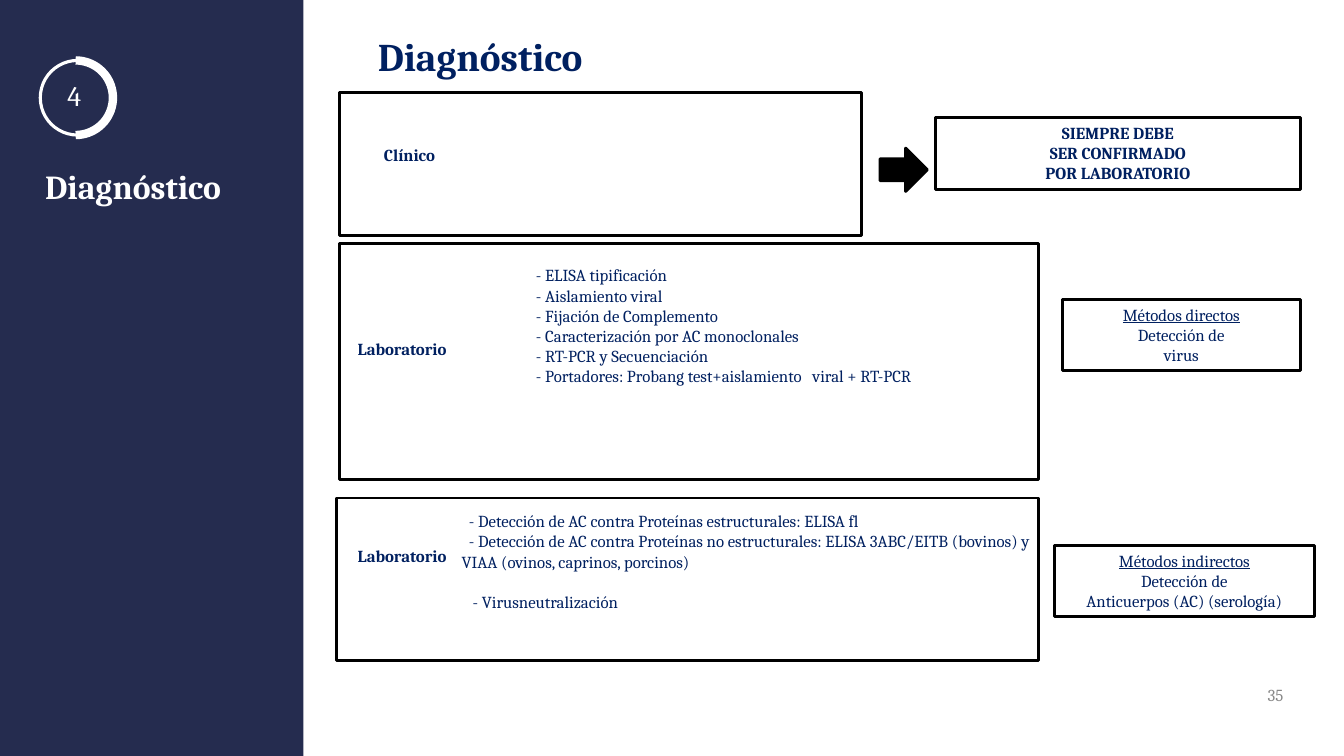
from collections import namedtuple
from math import cos, pi, sin

from lxml import etree
from pptx import Presentation
from pptx.dml.color import RGBColor
from pptx.enum.shapes import MSO_SHAPE as Preset
from pptx.enum.text import MSO_ANCHOR as Anchor, PP_ALIGN as Align
from pptx.oxml.ns import qn
from pptx.util import Pt

COLORS = {
    "navy": "252C4F",
    "text": "002060",
    "white": "FFFFFF",
    "black": "000000",
    "gray": "888888",
}
FONT = "Cambria"
LINE_HEIGHT = 14.4
NOTE_HEIGHT = 51.1

Box = namedtuple("Box", "left top width height")


def rgb(name):
    return RGBColor.from_string(COLORS[name])


def inside(box, left, top, width, height):
    """Return a box whose left and top are offsets from another box."""
    return Box(box.left + left, box.top + top, width, height)


def style_shape(shape, fill=None, line=None, weight=2):
    shape.shadow.inherit = False
    if fill:
        shape.fill.solid()
        shape.fill.fore_color.rgb = rgb(fill)
    else:
        shape.fill.background()
    if line:
        shape.line.color.rgb = rgb(line)
        shape.line.width = Pt(weight)
    else:
        shape.line.fill.background()


def add_preset(slide, preset, box, fill=None, line=None, weight=2):
    shape = slide.shapes.add_shape(preset, *map(Pt, box))
    style_shape(shape, fill, line, weight)
    return shape


def write(shape, text, size=12, color="text", bold=False, align=Align.LEFT,
          anchor=Anchor.TOP):
    frame = shape.text_frame
    frame.word_wrap = True
    frame.vertical_anchor = anchor
    frame.text = text
    for paragraph in frame.paragraphs:
        paragraph.alignment = align
        for run in paragraph.runs:
            run.font.name = FONT
            run.font.size = Pt(size)
            run.font.bold = bold
            run.font.color.rgb = rgb(color)
    return frame


def add_text(slide, box, text, **style):
    return write(slide.shapes.add_textbox(*map(Pt, box)), text, **style)


def add_note(slide, box, text, **style):
    note = add_preset(slide, Preset.RECTANGLE, box, line="black", weight=2.25)
    return write(note, text, align=Align.CENTER, **style)


def indent_first_line(paragraph, indent):
    properties = paragraph._p.get_or_add_pPr()
    properties.set("marL", "0")
    properties.set("indent", str(Pt(indent)))


def add_tab_stop(paragraph, position):
    tabs = etree.SubElement(paragraph._p.get_or_add_pPr(), qn("a:tabLst"))
    etree.SubElement(tabs, qn("a:tab"), pos=str(Pt(position)), algn="l")


def add_half_ring(slide, center_x, center_y, radius, steps=36):
    """Draw the thick right half of the ring, from top to bottom."""
    angles = [pi * step / steps - pi / 2 for step in range(steps + 1)]
    points = [(Pt(center_x + radius * cos(angle)),
               Pt(center_y + radius * sin(angle))) for angle in angles]
    builder = slide.shapes.build_freeform(*points[0])
    builder.add_line_segments(points[1:], close=False)
    style_shape(builder.convert_to_shape(), line="white", weight=6)


def draw_sidebar(slide, box):
    add_preset(slide, Preset.RECTANGLE, box, fill="navy")
    ring = inside(box, 39.6, 49, 53.3, 53.3)
    add_text(slide, inside(ring, 12.2, 9.4, 53.3, 37.4), "4",
             size=20, color="white")
    add_preset(slide, Preset.OVAL, ring, line="white", weight=2.25)
    radius = ring.height / 2
    add_half_ring(slide, ring.left + radius - 1.4, ring.top + radius, radius)
    frame = add_text(slide, inside(box, 36, 117.4, 172.8, 75.6), "Diagnóstico",
                     size=24, color="white", bold=True)
    frame.margin_top = frame.margin_bottom = Pt(7.2)


def draw_clinical(slide, box):
    add_preset(slide, Preset.RECTANGLE, box, line="black")
    add_text(slide, inside(box, 24.5, 33.9, 83.5, 21.6), "Clínico", bold=True)
    add_preset(slide, Preset.RIGHT_ARROW, inside(box, 386, 39.6, 33.8, 31),
               fill="black", line="black")
    add_note(slide, inside(box, 425.6, 18, 260.6, NOTE_HEIGHT),
             "SIEMPRE DEBE\nSER CONFIRMADO\nPOR LABORATORIO", bold=True)


def draw_laboratory(slide, box, label_at, list_at, tests, note_at, note):
    """Frame a group of tests; return the paragraphs of its list."""
    add_preset(slide, Preset.RECTANGLE, box, line="black")
    add_text(slide, inside(box, *label_at, 82.8, 21.6), "Laboratorio",
             bold=True)
    frame = add_text(slide, inside(box, *list_at, 94.3),
                     "\n".join(f"- {test}" for test in tests))
    note_frame = add_note(slide, inside(box, *note_at, NOTE_HEIGHT), note)
    note_frame.paragraphs[0].runs[0].font.underline = True
    return frame.paragraphs


def draw_direct_methods(slide, box):
    tests = [
        "ELISA tipificación",
        "Aislamiento viral",
        "Fijación de Complemento",
        "Caracterización por AC monoclonales",
        "RT-PCR y Secuenciación",
        "Portadores: Probang test+aislamiento\tviral + RT-PCR",
    ]
    paragraphs = draw_laboratory(
        slide, box, (5.8, 64.1), (133.2, 11.6, 360), tests,
        (516.3, 39.6, 169.9), "Métodos directos\nDetección de\nvirus")
    add_tab_stop(paragraphs[-1], 197.5)


def draw_indirect_methods(slide, box):
    tests = [
        "Detección de AC contra Proteínas estructurales: ELISA fl",
        "Detección de AC contra Proteínas no estructurales: "
        "ELISA 3ABC/EITB (bovinos) y VIAA (ovinos, caprinos, porcinos)",
        "Virusneutralización",
    ]
    paragraphs = draw_laboratory(
        slide, box, (7.9, 30.9), (82.1, 5.7, 436.3), tests,
        (512.6, 33.8, 185.8),
        "Métodos indirectos\nDetección de\nAnticuerpos (AC) (serología)")
    for paragraph, indent in zip(paragraphs, (5.3, 5.3, 8)):
        indent_first_line(paragraph, indent)
    paragraphs[-1].space_before = Pt(LINE_HEIGHT)


def main():
    presentation = Presentation()
    presentation.slide_width = Pt(960)
    presentation.slide_height = Pt(540)
    slide = presentation.slides.add_slide(presentation.slide_layouts[6])

    draw_sidebar(slide, Box(-10.8, -5.8, 227.5, 550.8))
    add_text(slide, Box(262.8, 19.4, 650.2, 46.8), "Diagnóstico",
             size=28, bold=True)
    draw_clinical(slide, Box(242.6, 66.2, 373, 102.2))
    draw_direct_methods(slide, Box(242.6, 174.2, 499, 168.5))
    draw_indirect_methods(slide, Box(240.5, 355.7, 501.1, 115.9))
    add_text(slide, Box(707.8, 481.7, 216, 28.8), "35", color="gray",
             align=Align.RIGHT, anchor=Anchor.MIDDLE)

    presentation.save("out.pptx")


if __name__ == "__main__":
    main()
